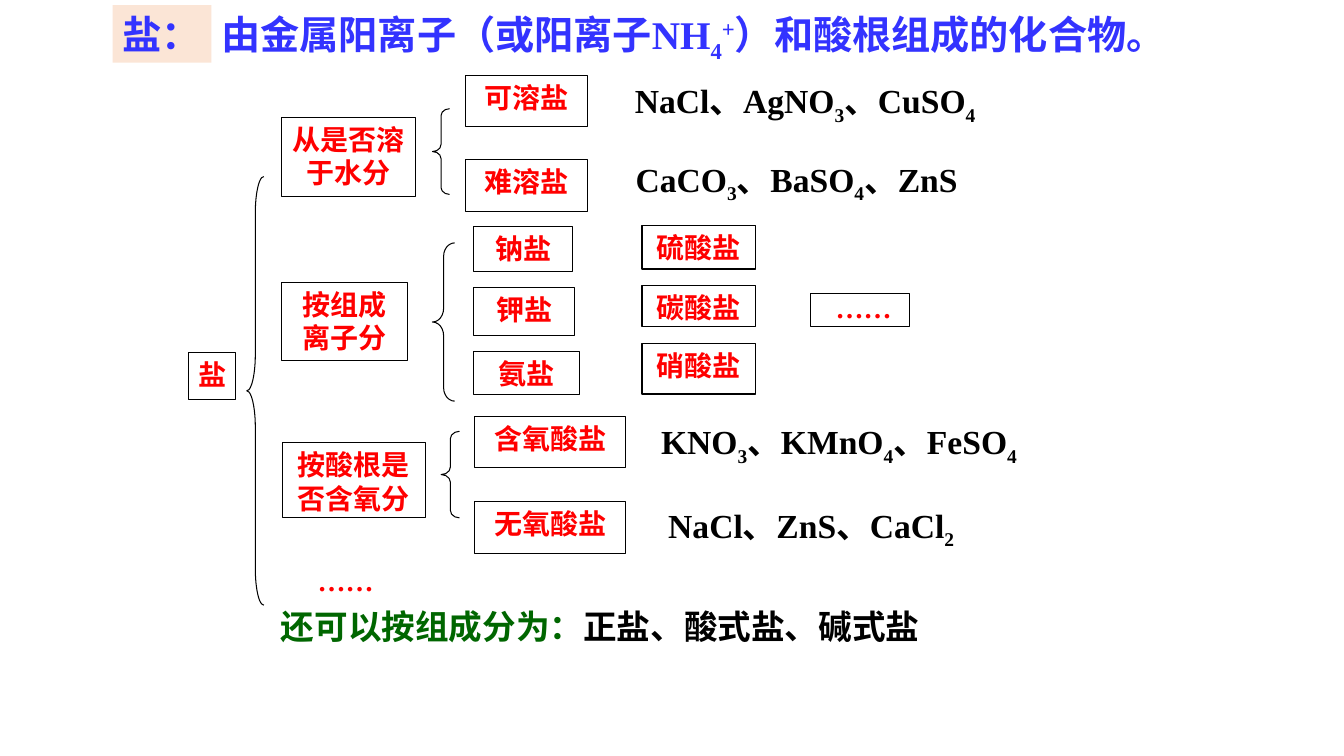
import itertools

import pptx
import pptx.util
import pptx.dml.color
import pptx.enum.shapes
import pptx.enum.text

Cm, Pt = pptx.util.Cm, pptx.util.Pt
SHAPE = pptx.enum.shapes.MSO_SHAPE
ALIGN = pptx.enum.text.PP_ALIGN
SERIF, SANS = "Times New Roman", "Arial"
COLORS = {"white": "FFFFFF", "black": "000000", "red": "FF0000",
          "blue": "3333FF", "green": "006600", "peach": "FBE5D6"}


def rgb(name):
    return pptx.dml.color.RGBColor.from_string(COLORS[name])


def baseline(char):
    """Digits in a formula sit low, the charge sits high."""
    return -25000 if char.isdigit() else 30000 if char == "+" else 0


def add_runs(p, text, size, color, font=SERIF):
    for offset, chars in itertools.groupby(text, baseline):
        r = p.add_run()
        r.text = "".join(chars)
        r.font.size, r.font.bold, r.font.name = Pt(size), True, font
        r.font.color.rgb = rgb(color)
        if offset:
            r._r.get_or_add_rPr().set("baseline", str(offset))


def add_shape(s, kind, box, fill=None, line="black"):
    sp = s.shapes.add_shape(kind, *map(Cm, box))
    sp.shadow.inherit = False
    if fill:
        sp.fill.solid()
        sp.fill.fore_color.rgb = rgb(fill)
    else:
        sp.fill.background()
    if line:
        sp.line.color.rgb = rgb(line)
        sp.line.width = Pt(0.75)
    else:
        sp.line.fill.background()
    return sp


def add_brace(s, box, curve):
    add_shape(s, SHAPE.LEFT_BRACE, box).adjustments[0] = curve


def put_text(sp, text, size, color, font=SERIF, align=ALIGN.LEFT, wrap=True):
    """Fill a shape from its top; unwrapped text lets the shape grow."""
    tf = sp.text_frame
    tf.word_wrap = wrap
    tf.vertical_anchor = pptx.enum.text.MSO_ANCHOR.TOP
    if not wrap:
        tf.auto_size = pptx.enum.text.MSO_AUTO_SIZE.SHAPE_TO_FIT_TEXT
    p = tf.paragraphs[0]
    p.alignment = align
    add_runs(p, text, size, color, font)
    return p


def add_text(s, box, text, size, color, **style):
    return put_text(s.shapes.add_textbox(*map(Cm, box)), text, size, color, **style)


def add_label(s, box, text):
    sp = add_shape(s, SHAPE.RECTANGLE, box, "white")
    put_text(sp, text, 20, "red", align=ALIGN.CENTER)


def add_dots(s, box):
    add_text(s, box, "……", 20, "red", align=ALIGN.CENTER, wrap=False)


def header(s, x, y, w, h):
    term_w = 2.49
    add_text(s, (x + term_w, y, w - term_w, h),
             "由金属阳离子（或阳离子NH4+）和酸根组成的化合物。", 28, "blue", wrap=False)
    sp = add_shape(s, SHAPE.RECTANGLE, (x, y, term_w, h), "peach", None)
    put_text(sp, "盐：", 28, "blue", font=SANS, wrap=False)


def root(s, x, y, w, h):
    side = 1.19
    add_label(s, (x, y + h / 2 - side / 2 - 0.37, side, side), "盐")
    add_brace(s, (x + w - 0.43, y, 0.43, h), 2.125)


def binary_branch(s, x, y, w, h, basis, basis_box, brace_box, kinds, kind_x, examples):
    """A basis of sorting, a brace and two kinds of salt with examples."""
    bx, by, bw, bh = basis_box
    add_label(s, (x + bx, y + by, bw, bh), basis)
    cx, cy, cw, ch = brace_box
    add_brace(s, (x + cx, y + cy, cw, ch), 0.41)
    kind_h = 1.3
    for i, kind in enumerate(kinds):
        add_label(s, (x + kind_x, y + i * (h - kind_h), w - kind_x, kind_h), kind)
    for ex, ey, ew, text, align in examples:
        add_text(s, (x + ex, y + ey, ew, 1.09), text, 24, "black", align=align)


def ion_branch(s, x, y, w, h):
    add_label(s, (x, y + 1.42, 3.18, 1.98), "按组成离子分")
    add_brace(s, (x + 3.81, y + 0.43, 0.56, h - 0.43), 0.609)
    cations = [("钠盐", 0.02, 2.49, 1.14), ("钾盐", 1.55, 2.54, 1.22),
               ("氨盐", 3.17, 2.67, 1.09)]
    anions = [("硫酸盐", 0, 2.87, 1.09), ("碳酸盐", 1.5, 2.87, 1.04),
              ("硝酸盐", 2.97, 2.87, 1.27)]
    for column_x, salts in ((4.85, cations), (9.09, anions)):
        for name, top, width, height in salts:
            add_label(s, (x + column_x, y + top, width, height), name)
    add_dots(s, (x + w - 2.13, y + 1.5, 1.93, 1.12))
    add_shape(s, SHAPE.RECTANGLE, (x + w - 2.51, y + 1.7, 2.51, 0.84))


def footer(s, x, y, w, h):
    add_dots(s, (x + 0.92, y, 1.93, 1.09))
    p = add_text(s, (x, y + 1.07, w, h - 1.07), "还可以按组成分为：", 24, "green", font=SANS)
    add_runs(p, "正盐、酸式盐、碱式盐", 24, "black", SANS)


def main():
    prs = pptx.Presentation()
    prs.slide_width, prs.slide_height = Cm(33.87), Cm(19.05)
    s = prs.slides.add_slide(prs.slide_layouts[6])
    root(s, 4.75, 4.45, 1.9, 10.8)
    binary_branch(s, 7.09, 1.9, 7.72, 3.42, "从是否溶于水分",
                  (0, 1.05, 3.38, 2), (3.81, 0.84, 0.43, 2.16),
                  ("可溶盐", "难溶盐"), 4.65,
                  [(8.66, 0, 13.77, "NaCl、AgNO3、CuSO4", ALIGN.LEFT),
                   (8.68, 1.98, 12.04, "CaCO3、BaSO4、ZnS", ALIGN.LEFT)])
    ion_branch(s, 7.09, 5.69, 15.84, 4.42)
    binary_branch(s, 7.11, 10.49, 8.66, 3.46, "按酸根是否含氧分",
                  (0, 0.66, 3.61, 1.9), (4.01, 0.38, 0.46, 2.18),
                  ("含氧酸盐", "无氧酸盐"), 4.85,
                  [(9.3, 0, 12.65, "KNO3、KMnO4、FeSO4", ALIGN.LEFT),
                   (8.89, 2.11, 8.89, "NaCl、ZnS、CaCl2", ALIGN.CENTER)])
    footer(s, 6.83, 14.07, 19.61, 2.34)
    header(s, 2.84, 0.13, 27.03, 1.45)
    prs.save("out.pptx")


if __name__ == "__main__":
    main()
